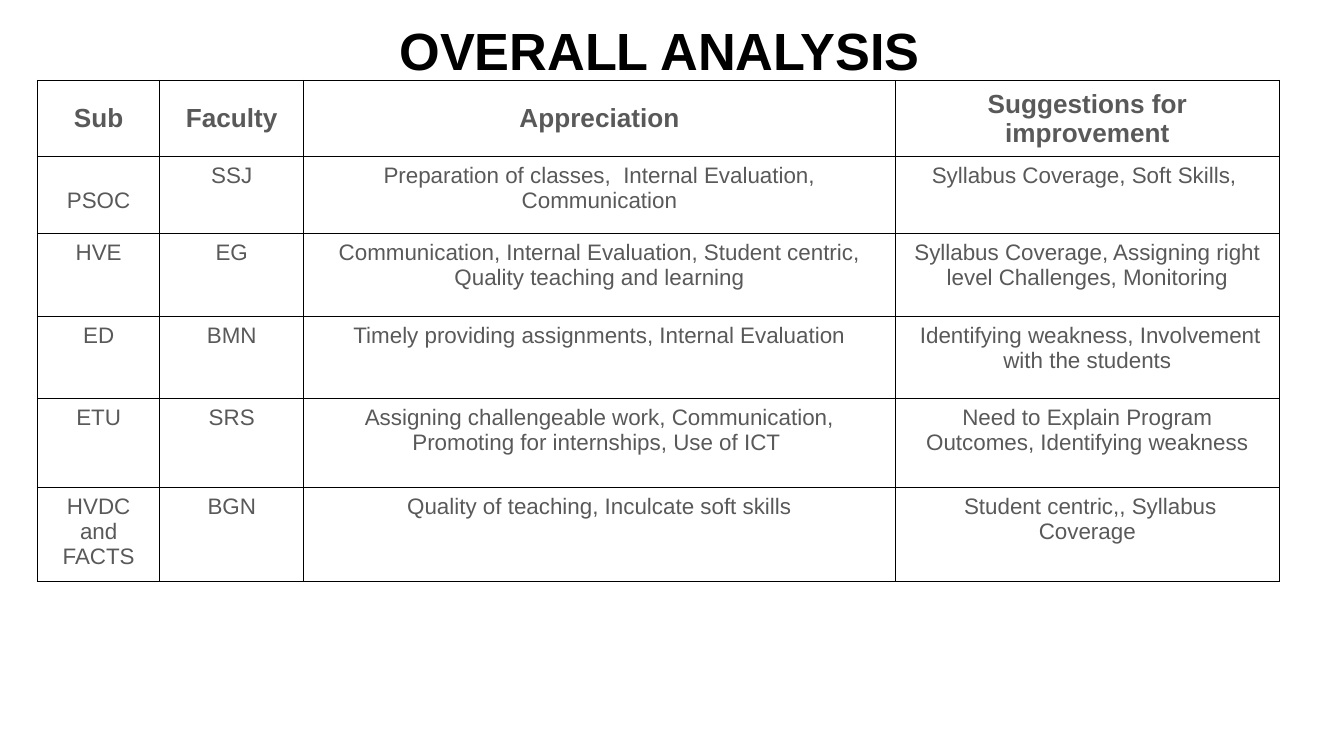
from lxml.etree import SubElement
from pptx import Presentation
from pptx.dml.color import RGBColor
from pptx.enum.text import MSO_ANCHOR as Anchor, PP_ALIGN as Align
from pptx.oxml.ns import qn
from pptx.util import Cm, Pt

COLORS = {"title": "000000", "text": "595959", "border": "000000", "back": "FFFFFF"}
FORMATS = {
    "title": {"size": Pt(28), "bold": True, "name": "Arial"},
    "header": {"size": Pt(14), "bold": True, "name": "Arial"},
    "body": {"size": Pt(12), "bold": False, "name": "Arial"},
}
COL_WIDTHS = [2.31, 2.72, 11.18, 7.26]
ROW_HEIGHTS = [1.36, 1.45, 1.56, 1.56, 1.68, 1.68]
ROWS = [
    ["Sub", "Faculty", "Appreciation", "Suggestions for improvement"],
    ["PSOC", "SSJ", "Preparation of classes,  Internal Evaluation, Communication",
     "Syllabus Coverage, Soft Skills, "],
    ["HVE", "EG",
     "Communication, Internal Evaluation, Student centric, Quality teaching and learning",
     "Syllabus Coverage, Assigning right level Challenges, Monitoring"],
    ["ED", "BMN", "Timely providing assignments, Internal Evaluation",
     " Identifying weakness, Involvement with the students"],
    ["ETU", "SRS",
     "Assigning challengeable work, Communication, Promoting for internships, Use of ICT ",
     "Need to Explain Program Outcomes, Identifying weakness"],
    ["HVDC and FACTS", "BGN", "Quality of teaching, Inculcate soft skills",
     " Student centric,, Syllabus Coverage"],
]


class Deck:
    """Holds the style and the current slide."""

    def __init__(self, prs):
        self.s = prs.slides.add_slide(prs.slide_layouts[6])

    def add_text(self, tf, text, style, color):
        p = tf.paragraphs[0]
        p.alignment = Align.CENTER
        r = p.add_run()
        r.text = text
        for key, value in FORMATS[style].items():
            setattr(r.font, key, value)
        r.font.color.rgb = RGBColor.from_string(COLORS[color])

    def title(self, text, x, y, w, h):
        sp = self.s.shapes.add_textbox(Cm(x), Cm(y), Cm(w), Cm(h))
        tf = sp.text_frame
        tf.word_wrap = True
        tf.vertical_anchor = Anchor.TOP
        tf.margin_top, tf.margin_bottom = Cm(0.35), 0
        self.add_text(tf, text, "title", "title")

    def borders(self, cell):
        tc_pr = cell._tc.get_or_add_tcPr()
        for side in ("lnL", "lnR", "lnT", "lnB"):
            ln = SubElement(tc_pr, qn(f"a:{side}"), w=str(Pt(0.75)))
            fill = SubElement(ln, qn("a:solidFill"))
            SubElement(fill, qn("a:srgbClr"), val=COLORS["border"])

    def table(self, rows, x, y, widths, heights):
        table = self.s.shapes.add_table(
            len(rows), len(widths), Cm(x), Cm(y), Cm(sum(widths)), Cm(sum(heights))).table
        table.horz_banding = False
        for col, width in zip(table.columns, widths):
            col.width = Cm(width)
        for i, (row, height) in enumerate(zip(rows, heights)):
            table.rows[i].height = Cm(height)
            for j, text in enumerate(row):
                cell = table.cell(i, j)
                self.borders(cell)
                cell.fill.solid()
                cell.fill.fore_color.rgb = RGBColor.from_string(COLORS["back"])
                cell.vertical_anchor = Anchor.TOP if i else Anchor.MIDDLE
                self.add_text(cell.text_frame, text, "body" if i else "header", "text")
        return table


def main():
    prs = Presentation()
    prs.slide_width, prs.slide_height = Cm(25.4), Cm(14.28)
    deck = Deck(prs)

    # Heading
    deck.title("OVERALL ANALYSIS", 0.69, 0, 23.55, 1.4)

    # Feedback per subject; the first subject sits one line lower
    table = deck.table(ROWS, 0.71, 1.52, COL_WIDTHS, ROW_HEIGHTS)
    table.cell(1, 0).margin_top = Cm(0.6)

    prs.save("out.pptx")


if __name__ == "__main__":
    main()
